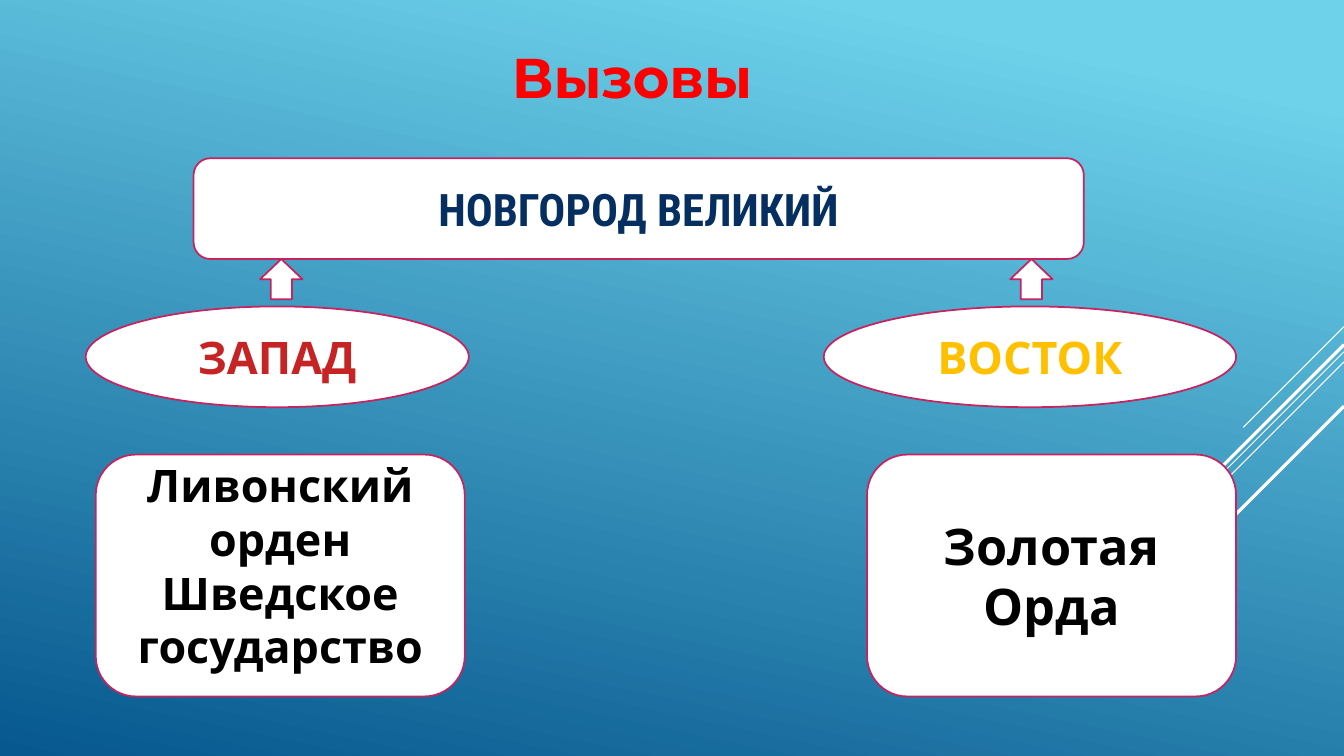
from lxml import etree
from pptx import Presentation
from pptx.dml.color import RGBColor
from pptx.enum.shapes import MSO_CONNECTOR, MSO_SHAPE as SHAPE
from pptx.enum.text import MSO_ANCHOR as ANCHOR, PP_ALIGN as ALIGN
from pptx.oxml.ns import qn
from pptx.util import Emu, Pt

PX = 9144  # 100 px to the inch

WHITE = RGBColor(0xFF, 0xFF, 0xFF)
BLACK = RGBColor(0, 0, 0)
SKY = RGBColor(0x6E, 0xD2, 0xEB)
DEEP = RGBColor(0x06, 0x58, 0x8E)
CRIMSON = RGBColor(0xC6, 0x23, 0x5F)
RED = RGBColor(0xFF, 0, 0)
NAVY = RGBColor(0x05, 0x2F, 0x61)
BRICK = RGBColor(0xC6, 0x23, 0x24)
AMBER = RGBColor(0xFF, 0xC0, 0)


def px(*lengths):
    return [Emu(n * PX) for n in lengths]


class Deck:
    font = "Quicksand"
    fill = WHITE
    outline = CRIMSON

    def __init__(self, width, height):
        self.prs = Presentation()
        self.prs.slide_width, self.prs.slide_height = px(width, height)
        self.s = self.prs.slides.add_slide(self.prs.slide_layouts[6])

    def background(self, start, end, angle):
        fill = self.s.background.fill
        fill.gradient()
        fill.gradient_angle = angle
        for stop, (position, color) in zip(fill.gradient_stops, (start, end)):
            stop.position = position
            stop.color.rgb = color

    def line(self, x1, y1, x2, y2, weight):
        c = self.s.shapes.add_connector(MSO_CONNECTOR.STRAIGHT, *px(x1, y1, x2, y2))
        c.line.color.rgb = WHITE
        c.line.width = Pt(weight)
        etree.SubElement(c._element.spPr, qn("a:effectLst"))

    def add_lines(self, sp, lines, size, color, font=None):
        tf = sp.text_frame
        tf.word_wrap = True
        for i, text in enumerate(lines):
            p = tf.add_paragraph() if i else tf.paragraphs[0]
            p.alignment = ALIGN.CENTER
            r = p.add_run()
            r.text = text
            r.font.name = font or self.font
            r.font.size = Pt(size)
            r.font.bold = True
            r.font.color.rgb = color

    def text(self, box, *style):
        self.add_lines(self.s.shapes.add_textbox(*px(*box)), *style)

    def shape(self, kind, box, *style, bottom=5):
        """Draw an outlined shape; bottom is the inset under its text."""
        sp = self.s.shapes.add_shape(kind, *px(*box))
        sp.shadow.inherit = False
        sp.fill.solid()
        sp.fill.fore_color.rgb = self.fill
        sp.line.color.rgb = self.outline
        sp.line.width = Pt(1.25)
        if style:
            sp.text_frame.vertical_anchor = ANCHOR.MIDDLE
            sp.text_frame.margin_bottom = Emu(bottom * PX)
            self.add_lines(sp, *style)


def main():
    deck = Deck(1333, 750)
    deck.background((0.1, SKY), (1, DEEP), 258)

    # Diagonal strokes run down-left from the right edge
    for y, run, weight in ((324, 100, 0.75), (349, 326, 0.75), (359, 207, 0.75),
                           (342, 191, 2.25), (403, 139, 2.25)):
        deck.line(1333, y, 1333 - run, y + run, weight)

    deck.text((286, 37, 682, 77), ["Вызовы"], 40, RED, "Montserrat")
    deck.shape(SHAPE.ROUNDED_RECTANGLE, (192, 157, 883, 100),
               ["НОВГОРОД ВЕЛИКИЙ"], 32, NAVY, "Roboto Condensed")

    for x, width, side, color in ((85, 380, "ЗАПАД", BRICK),
                                  (817, 409, "ВОСТОК", AMBER)):
        deck.shape(SHAPE.OVAL, (x, 304, width, 100), [side], 32, color)

    for x, rivals, size, bottom in (
            (95, ["Ливонский орден", "Шведское государство"], 32, 25),
            (860, ["Золотая Орда"], 36, 5)):
        deck.shape(SHAPE.ROUNDED_RECTANGLE, (x, 451, 366, 240),
                   rivals, size, BLACK, bottom=bottom)

    for x in (258, 1002):
        deck.shape(SHAPE.UP_ARROW, (x, 257, 42, 40))

    deck.prs.save("out.pptx")


if __name__ == "__main__":
    main()
